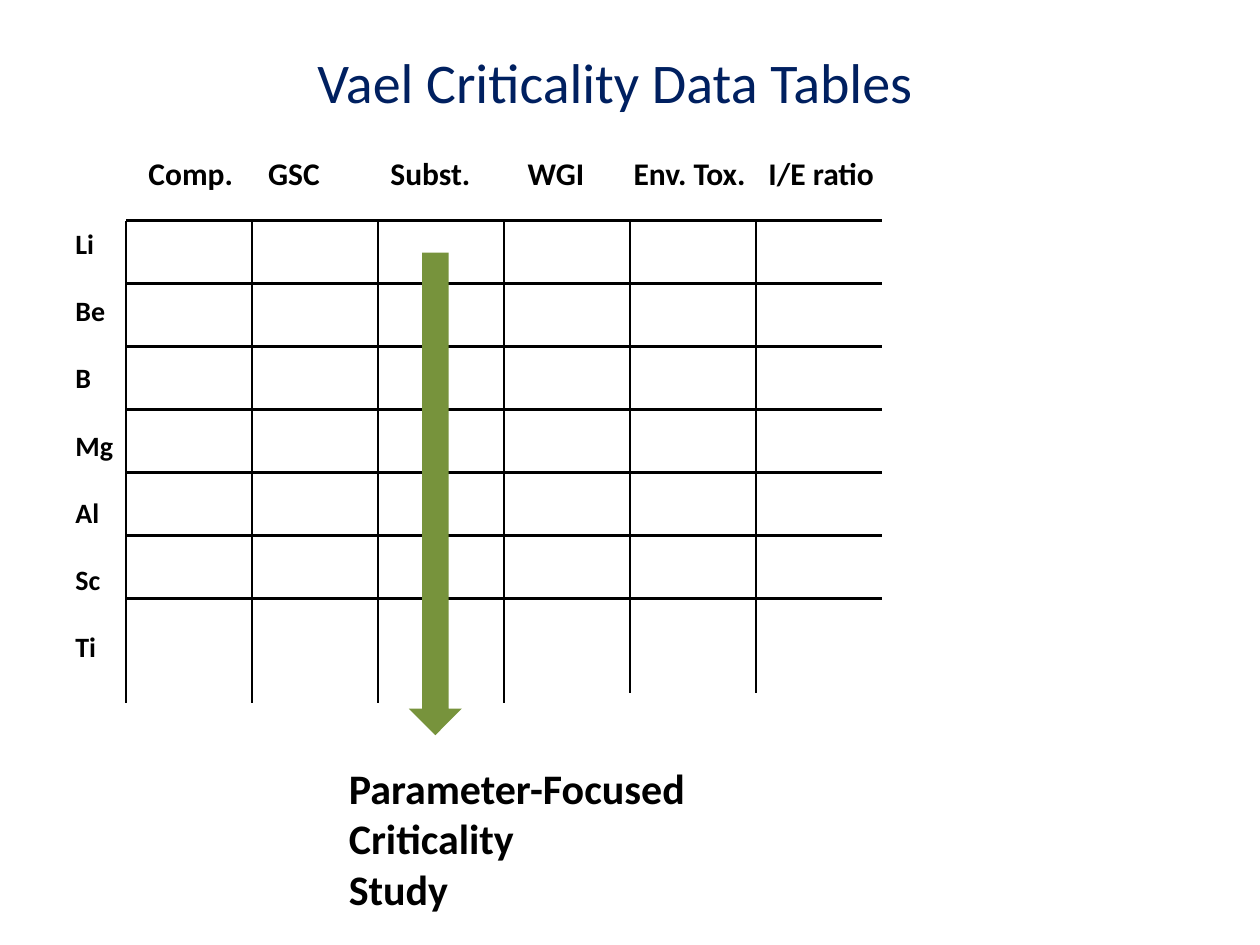
from dataclasses import dataclass

from lxml import etree
from pptx import Presentation
from pptx.dml.color import RGBColor
from pptx.enum.shapes import MSO_CONNECTOR, MSO_SHAPE
from pptx.enum.text import MSO_AUTO_SIZE
from pptx.oxml.ns import qn
from pptx.util import Inches, Pt

STRAIGHT = MSO_CONNECTOR.STRAIGHT
RIGHT_ARROW = MSO_SHAPE.RIGHT_ARROW
GROW = MSO_AUTO_SIZE.SHAPE_TO_FIT_TEXT
BLANK_LAYOUT = 6


@dataclass(frozen=True)
class Theme:
    font: str = "Calibri"
    ink: RGBColor = RGBColor(0x00, 0x00, 0x00)
    navy: RGBColor = RGBColor(0x00, 0x20, 0x60)
    green: RGBColor = RGBColor(0x77, 0x93, 0x3C)
    title_size: int = 32
    caption_size: int = 24
    header_size: int = 18
    label_size: int = 16
    line_width: float = 1.5


class SlideBuilder:
    def __init__(self, slide, theme):
        self.shapes = slide.shapes
        self.theme = theme

    def line(self, x1, y1, x2, y2):
        connector = self.shapes.add_connector(
            STRAIGHT, Inches(x1), Inches(y1), Inches(x2), Inches(y2))
        connector.line.color.rgb = self.theme.ink
        connector.line.width = Pt(self.theme.line_width)
        etree.SubElement(connector._element.spPr, qn("a:effectLst"))

    def text(self, box, lines, size, color=None, bold=True, wrap=True, gap=0):
        """Add one paragraph per line, with gap points between them."""
        shape = self.shapes.add_textbox(*map(Inches, box))
        frame = shape.text_frame
        frame.word_wrap = wrap
        frame.auto_size = GROW
        for index, line in enumerate(lines):
            paragraph = frame.paragraphs[0] if index == 0 else frame.add_paragraph()
            paragraph.space_before = Pt(gap if index else 0)
            run = paragraph.add_run()
            run.text = line
            run.font.name = self.theme.font
            run.font.size = Pt(size)
            run.font.bold = bold
            run.font.color.rgb = color or self.theme.ink
        return frame

    def tabbed_row(self, box, entries, stops, size):
        """Add one line of entries, each after the first at a tab stop."""
        frame = self.text(box, ["\t".join(entries)], size)
        properties = frame.paragraphs[0]._p.get_or_add_pPr()
        tab_list = etree.SubElement(properties, qn("a:tabLst"))
        for stop in stops:
            etree.SubElement(tab_list, qn("a:tab"), pos=str(Inches(stop)), algn="l")

    def arrow(self, box, rotation):
        shape = self.shapes.add_shape(RIGHT_ARROW, *map(Inches, box))
        shape.rotation = rotation
        shape.shadow.inherit = False
        shape.fill.solid()
        shape.fill.fore_color.rgb = self.theme.green
        shape.line.fill.background()


def main():
    presentation = Presentation()
    presentation.slide_width = Inches(10)
    presentation.slide_height = Inches(7.5)
    slide = presentation.slides.add_slide(presentation.slide_layouts[BLANK_LAYOUT])
    theme = Theme()
    builder = SlideBuilder(slide, theme)

    grid_left, grid_top, grid_right = 1, 1.75, 7
    row_height = 0.5
    for row in range(7):
        y = grid_top + row * row_height
        builder.line(grid_left, y, grid_right, y)
    for x in range(grid_left, grid_right):
        builder.line(x, grid_top, x, 5.58 if x < 5 else 5.5)

    elements = ["Li", "Be", "B", "Mg", "Al", "Sc", "Ti"]
    builder.text((0.5, 1.75, 0.59, 3.6), elements, theme.label_size, gap=19.2)
    builder.tabbed_row(
        (1.08, 1.17, 6.55, 0.4),
        ["Comp.", "GSC", "Subst.", "WGI", "Env. Tox.", "I/E ratio"],
        [0.95, 1.92, 3.01, 3.85, 4.92], theme.header_size)
    builder.text((2.42, 0.33, 4.94, 0.64), ["Vael Criticality Data Tables"],
                 theme.title_size, theme.navy, bold=False, wrap=False)
    builder.arrow((1.54, 3.71, 3.83, 0.42), 90)
    builder.text((2.67, 6, 2.92, 1.31),
                 ["Parameter-Focused", "Criticality", "Study"], theme.caption_size)

    presentation.save("out.pptx")


if __name__ == "__main__":
    main()
